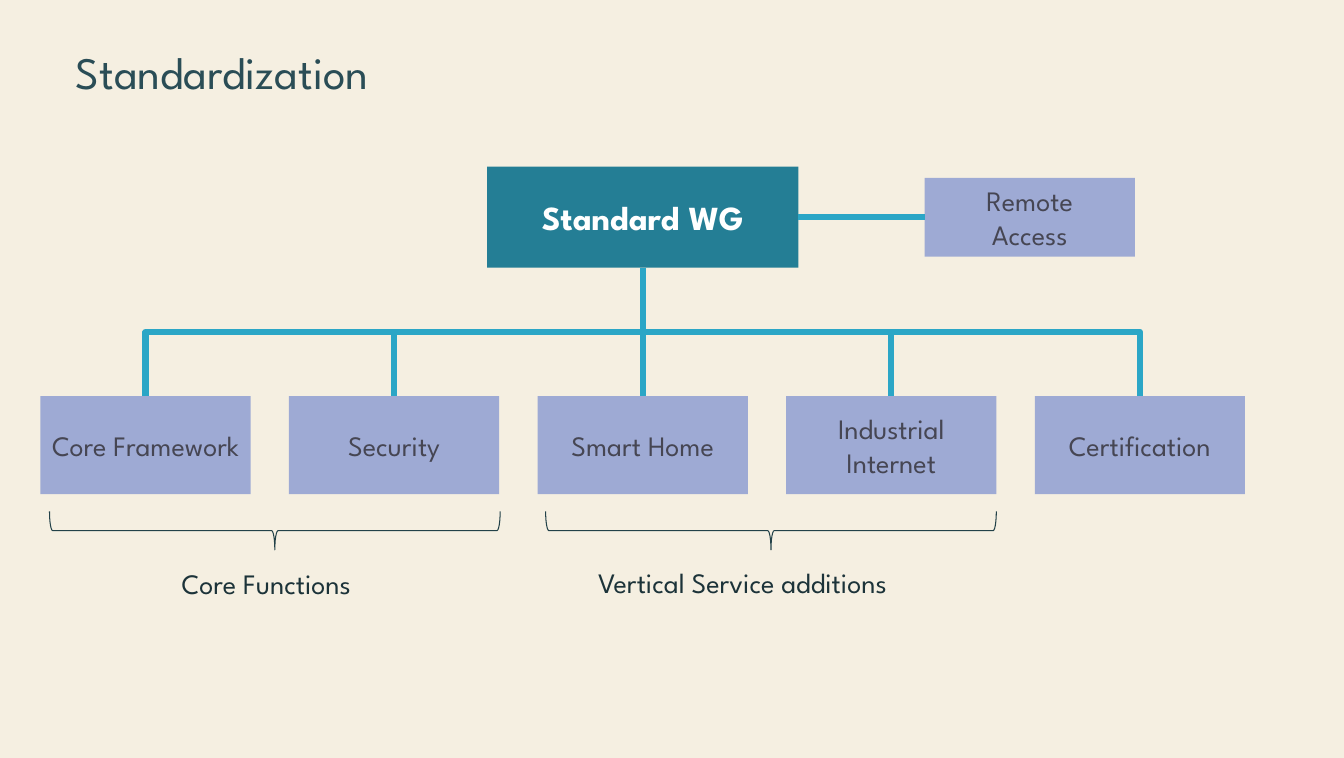
from lxml import etree
from pptx import Presentation
from pptx.dml.color import RGBColor
from pptx.enum.shapes import MSO_CONNECTOR, MSO_SHAPE
from pptx.enum.text import MSO_ANCHOR, MSO_AUTO_SIZE, PP_ALIGN
from pptx.oxml.ns import qn
from pptx.util import Pt

PX = 9144
FONT = "League Spartan"

CREAM = RGBColor(0xF5, 0xEF, 0xE1)
TITLE_TEAL = RGBColor(0x2A, 0x4D, 0x56)
TEAL = RGBColor(0x24, 0x7E, 0x95)
LAVENDER = RGBColor(0x9E, 0xAA, 0xD4)
CYAN = RGBColor(0x2B, 0xA6, 0xC6)
BRACE_TEAL = RGBColor(0x22, 0x41, 0x48)
LABEL_TEAL = RGBColor(0x1C, 0x33, 0x39)
GRAY = RGBColor(0x46, 0x46, 0x53)
WHITE = RGBColor(0xFF, 0xFF, 0xFF)

RECTANGLE = MSO_SHAPE.RECTANGLE
LEFT_BRACE = MSO_SHAPE.LEFT_BRACE
STRAIGHT = MSO_CONNECTOR.STRAIGHT
ELBOW = MSO_CONNECTOR.ELBOW
MIDDLE = MSO_ANCHOR.MIDDLE
LEFT = PP_ALIGN.LEFT
CENTER = PP_ALIGN.CENTER
NO_FIT = MSO_AUTO_SIZE.NONE
GROW = MSO_AUTO_SIZE.SHAPE_TO_FIT_TEXT

TOP_SIDE, LEFT_SIDE, BOTTOM_SIDE, RIGHT_SIDE = range(4)

BOX_WIDTH = 208
GROUPS = ["Core Framework", "Security", "Smart Home", "Industrial\nInternet", "Certification"]
GROUP_LEFT, GROUP_TOP, GROUP_HEIGHT, GROUP_PITCH = 40, 392, 97, 246


def px(*lengths):
    return [length * PX for length in lengths]


def write(text_frame, text, size, color, alignment=LEFT, bold=False):
    paragraph = text_frame.paragraphs[0]
    for number, line in enumerate(text.split("\n")):
        if number:
            paragraph.add_line_break()
        paragraph.add_run().text = line
    paragraph.alignment = alignment
    font = paragraph.font
    font.name = FONT
    font.size = Pt(size)
    font.bold = bold
    font.color.rgb = color


def add_title(slide, text):
    title = slide.shapes.title
    title.left, title.top, title.width, title.height = px(65, 8, 1200, 125)
    title.text_frame.vertical_anchor = MIDDLE
    title.text_frame.auto_size = NO_FIT
    write(title.text_frame, text, 32, TITLE_TEAL)


def add_box(slide, text, left, top, width, height, fill=LAVENDER, size=20, color=GRAY, bold=False):
    box = slide.shapes.add_shape(RECTANGLE, *px(left, top, width, height))
    box.shadow.inherit = False
    box.fill.solid()
    box.fill.fore_color.rgb = fill
    box.line.fill.background()
    box.text_frame.vertical_anchor = MIDDLE
    write(box.text_frame, text, size, color, CENTER, bold)
    return box


def join(slide, kind, start, start_side, end, end_side):
    connector = slide.shapes.add_connector(kind, 0, 0, 0, 0)
    connector.begin_connect(start, start_side)
    connector.end_connect(end, end_side)
    connector.line.color.rgb = CYAN
    connector.line.width = Pt(4.5)
    etree.SubElement(connector.element.spPr, qn("a:effectLst"))
    return connector


def join_branch(slide, parent, child):
    connector = join(slide, ELBOW, parent, BOTTOM_SIDE, child, TOP_SIDE)
    begin_x, end_x = connector.begin_x, connector.end_x
    begin_y, end_y = connector.begin_y, connector.end_y
    drop, reach = end_y - begin_y, abs(end_x - begin_x)
    connector.left = (begin_x + end_x - drop) // 2
    connector.top = (begin_y + end_y - reach) // 2
    connector.width, connector.height = drop, reach
    goes_right = end_x > begin_x
    frame = connector.element.spPr.find(qn("a:xfrm"))
    frame.set("rot", str((270 if goes_right else 90) * 60000))
    frame.set("flipH", "1" if goes_right else "0")
    frame.set("flipV", "0")


def add_brace(slide, left):
    brace = slide.shapes.add_shape(LEFT_BRACE, *px(left, 302, 38, 446))
    brace.rotation = 270
    brace.shadow.inherit = False
    brace.fill.background()
    brace.line.color.rgb = BRACE_TEAL
    brace.line.width = Pt(0.75)


def add_label(slide, text, left, top, width):
    label = slide.shapes.add_textbox(*px(left, top, width, 44))
    label.text_frame.word_wrap = False
    label.text_frame.auto_size = GROW
    write(label.text_frame, text, 20, LABEL_TEAL)


def main():
    presentation = Presentation()
    presentation.slide_width, presentation.slide_height = px(1330, 750)
    slide = presentation.slides.add_slide(presentation.slide_layouts[5])
    slide.background.fill.solid()
    slide.background.fill.fore_color.rgb = CREAM

    add_title(slide, "Standardization")
    root = add_box(slide, "Standard WG", 482, 165, 308, 100, TEAL, 24, WHITE, True)
    remote = add_box(slide, "Remote\nAccess", 915, 176, BOX_WIDTH, 78)
    join(slide, STRAIGHT, root, RIGHT_SIDE, remote, LEFT_SIDE)

    for index, name in enumerate(GROUPS):
        left = GROUP_LEFT + index * GROUP_PITCH
        group = add_box(slide, name, left, GROUP_TOP, BOX_WIDTH, GROUP_HEIGHT)
        if index == len(GROUPS) // 2:
            join(slide, STRAIGHT, root, BOTTOM_SIDE, group, TOP_SIDE)
        else:
            join_branch(slide, root, group)

    for brace_left in (253, 744):
        add_brace(slide, brace_left)
    add_label(slide, "Core Functions", 170, 556, 223)
    add_label(slide, "Vertical Service additions", 582, 555, 363)

    presentation.save("out.pptx")


if __name__ == "__main__":
    main()
